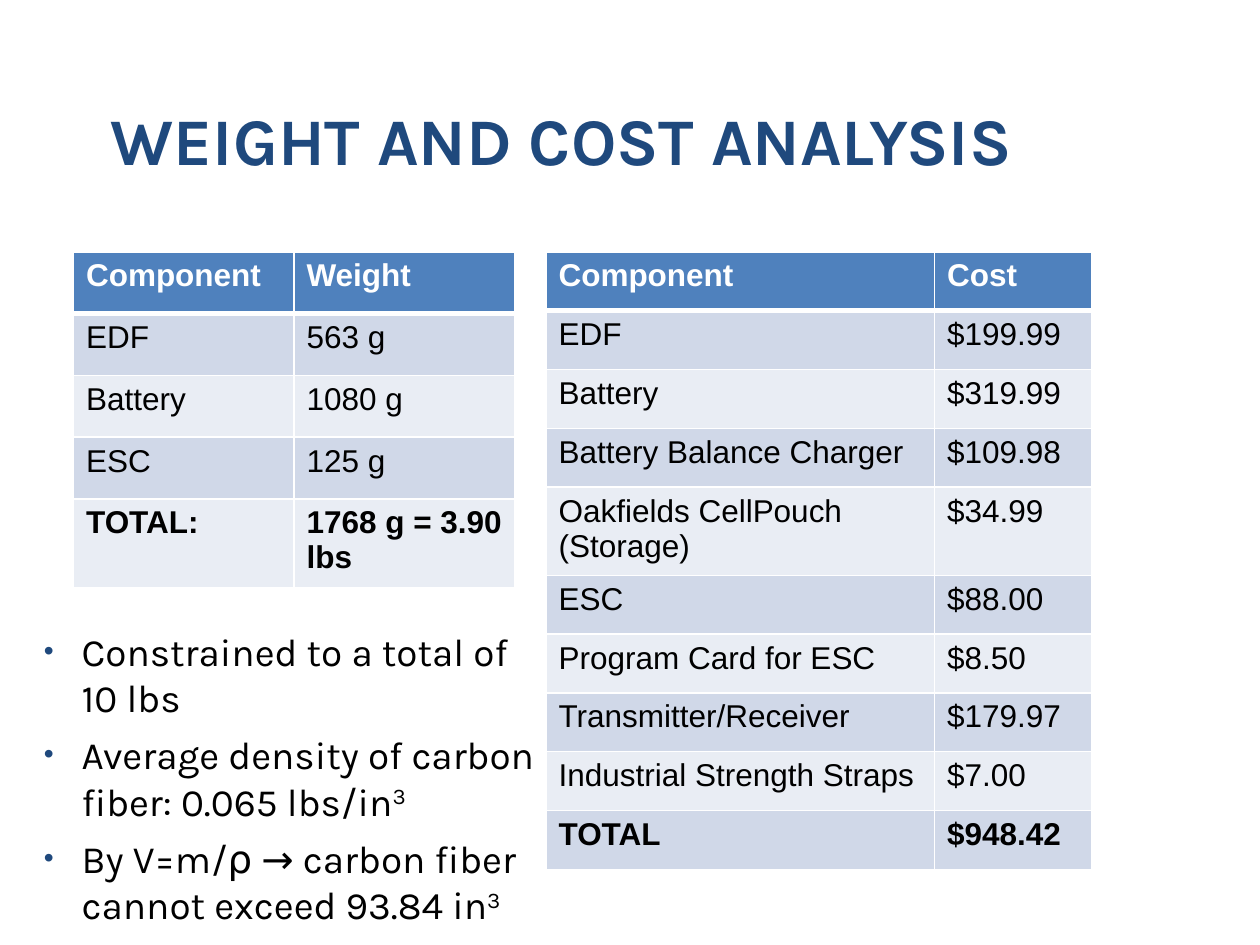
from dataclasses import dataclass

from lxml import etree
from pptx import Presentation, util as u
from pptx.dml.color import RGBColor
from pptx.enum import text
from pptx.oxml import ns


@dataclass(frozen=True)
class Theme:
    heading_font: str = "Karla"
    table_font: str = "Arial"
    navy: str = "1F497D"
    header: str = "4F81BD"
    bands: tuple = ("D0D8E8", "E9EDF4")
    white: str = "FFFFFF"
    black: str = "000000"
    title_size: float = 38
    body_size: float = 22.1
    table_size: float = 18


@dataclass(frozen=True)
class Box:
    """Place and size in grid units, twelve to the inch."""
    col: float
    row: float
    cols: float
    rows: float

    def emu(self) -> list:
        return [grid(n) for n in (self.col, self.row, self.cols, self.rows)]


@dataclass(frozen=True)
class TableData:
    col: float
    row: float
    widths: tuple
    heights: tuple
    rows: tuple


THEME = Theme()
SLIDE_COLS, SLIDE_ROWS = 120, 90

WEIGHTS = TableData(7, 24, (21, 21), (5.88,) * 4 + (8.5,), (
    ("Component", "Weight"),
    ("EDF", "563 g"),
    ("Battery", "1080 g"),
    ("ESC", "125 g"),
    ("TOTAL:", "1768 g = 3.90 lbs"),
))
COSTS = TableData(52, 24, (37, 15), (5.6,) * 10, (
    ("Component", "Cost"),
    ("EDF", "$199.99"),
    ("Battery", "$319.99"),
    ("Battery Balance Charger", "$109.98"),
    ("Oakfields CellPouch (Storage)", "$34.99"),
    ("ESC", "$88.00"),
    ("Program Card for ESC", "$8.50"),
    ("Transmitter/Receiver", "$179.97"),
    ("Industrial Strength Straps", "$7.00"),
    ("TOTAL", "$948.42"),
))
# Each bullet is its text and its superscript
BULLETS = (
    ("Constrained to a total of 10 lbs", ""),
    ("Average density of carbon fiber: 0.065 lbs/in", "3"),
    ("By V=m/ρ → carbon fiber cannot exceed 93.84 in", "3"),
)


def grid(n: float) -> int:
    return u.Inches(n / 12)


def set_font(p, name: str, size: float, color: str, bold: bool = False) -> None:
    p.font.name, p.font.size, p.font.bold = name, u.Pt(size), bold
    p.font.color.rgb = RGBColor.from_string(color)


def add_element(parent, tag: str, **attrs: str):
    return etree.SubElement(parent, ns.qn(tag), **attrs)


def add_text_frame(s, box: Box):
    tf = s.shapes.add_textbox(*box.emu()).text_frame
    tf.word_wrap = True
    return tf


def add_title(s, box: Box, title: str) -> None:
    tf = add_text_frame(s, box)
    tf.vertical_anchor = text.MSO_ANCHOR.BOTTOM
    tf.margin_left = tf.margin_right = u.Inches(0.05)
    tf.margin_top = tf.margin_bottom = 0
    p = tf.paragraphs[0]
    p.text, p.alignment = title, text.PP_ALIGN.CENTER
    set_font(p, THEME.heading_font, THEME.title_size, THEME.navy, True)


def add_bullets(s, box: Box, bullets: tuple) -> None:
    tf = add_text_frame(s, box)
    for i, (words, power) in enumerate(bullets):
        p = tf.add_paragraph() if i else tf.paragraphs[0]
        p.space_before = u.Pt(6 if i else 0)
        pPr = p._p.get_or_add_pPr()
        pPr.set("marL", str(u.Inches(0.3)))
        pPr.set("indent", str(-u.Inches(0.3)))
        add_element(add_element(pPr, "a:buClr"), "a:srgbClr", val=THEME.navy)
        add_element(pPr, "a:buSzPct", val="73000")
        add_element(pPr, "a:buFont", typeface="Arial")
        add_element(pPr, "a:buChar", char="•")
        p.add_run().text = words
        if power:
            r = p.add_run()
            r.text = power
            r.font._element.set("baseline", "30000")
        set_font(p, THEME.heading_font, THEME.body_size, THEME.black)


def set_borders(cell, bottom: float, top: float) -> None:
    tcPr = cell._tc.get_or_add_tcPr()
    widths = {"a:lnL": 1, "a:lnR": 1, "a:lnT": top, "a:lnB": bottom}
    for tag, width in widths.items():
        ln = add_element(tcPr, tag, w=str(u.Pt(width)))
        add_element(add_element(ln, "a:solidFill"), "a:srgbClr", val=THEME.white)


def add_table(s, data: TableData) -> None:
    box = Box(data.col, data.row, sum(data.widths), sum(data.heights))
    table = s.shapes.add_table(len(data.rows), len(data.widths), *box.emu()).table
    for column, width in zip(table.columns, data.widths):
        column.width = grid(width)
    for i, (row, height, values) in enumerate(zip(table.rows, data.heights, data.rows)):
        row.height = grid(height)
        is_header, is_total = i == 0, i == len(data.rows) - 1
        fill = THEME.header if is_header else THEME.bands[(i - 1) % 2]
        color = THEME.white if is_header else THEME.black
        for cell, value in zip(row.cells, values):
            cell.text = value
            set_font(cell.text_frame.paragraphs[0], THEME.table_font,
                     THEME.table_size, color, is_header or is_total)
            set_borders(cell, bottom=3 if is_header else 1, top=3 if i == 1 else 1)
            cell.fill.solid()
            cell.fill.fore_color.rgb = RGBColor.from_string(fill)


def main() -> None:
    prs = Presentation()
    prs.slide_width, prs.slide_height = grid(SLIDE_COLS), grid(SLIDE_ROWS)
    s = prs.slides.add_slide(prs.slide_layouts[6])

    # Title and constraints
    add_title(s, Box(6, 2, 95, 15), "WEIGHT AND COST ANALYSIS")
    add_bullets(s, Box(3, 59.2, 50, 27.8), BULLETS)

    # Weight and cost tables
    for data in (WEIGHTS, COSTS):
        add_table(s, data)

    prs.save("out.pptx")


if __name__ == "__main__":
    main()
